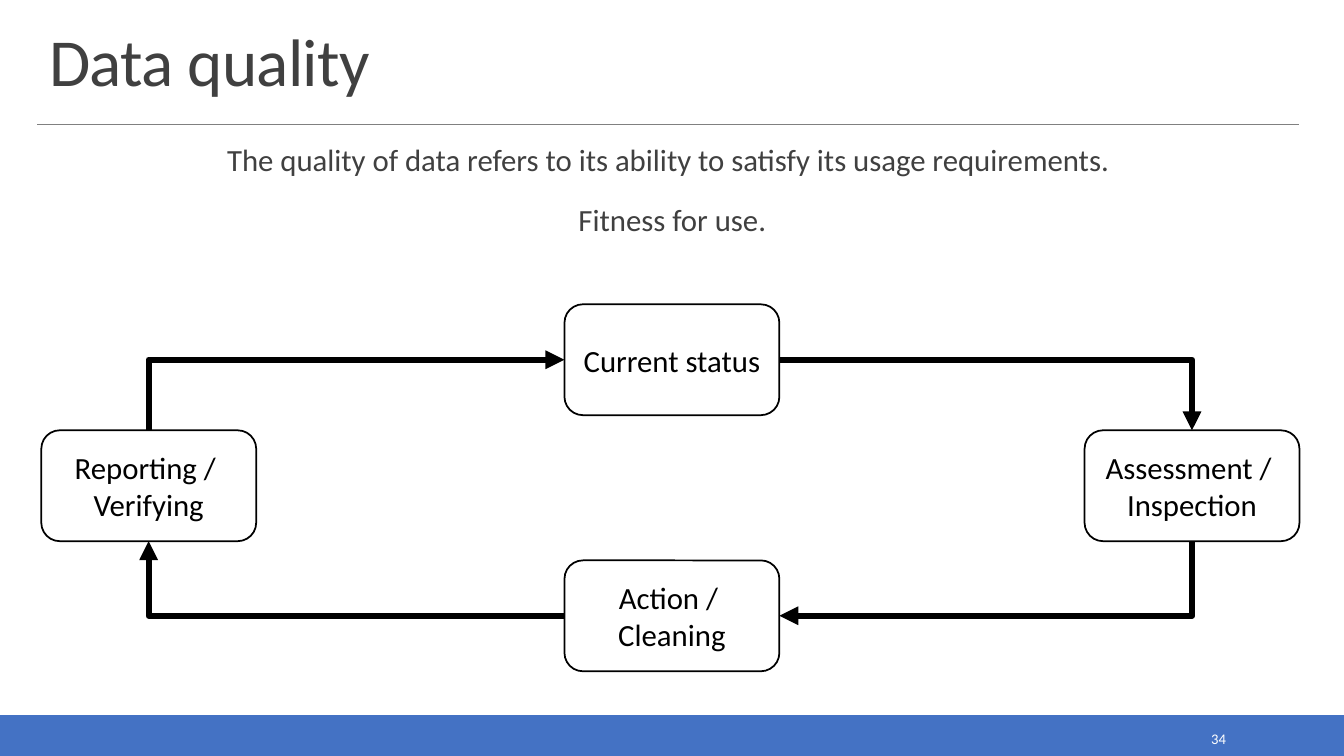
import dataclasses

import pptx
import pptx.dml.color
import pptx.enum.shapes
import pptx.enum.text
import pptx.oxml
import pptx.oxml.ns
import pptx.util

Pt = pptx.util.Pt
Align = pptx.enum.text.PP_ALIGN
Anchor = pptx.enum.text.MSO_ANCHOR
Preset = pptx.enum.shapes.MSO_SHAPE
TOP, LEFT, BOTTOM, RIGHT = range(4)


@dataclasses.dataclass(frozen=True)
class Theme:
    font: str = "Calibri"
    ink: str = "000000"
    grey: str = "404040"
    rule: str = "808080"
    bar: str = "4472C4"
    light: str = "FFFFFF"
    title_size: float = 48
    body_size: float = 22
    number_size: float = 10.5


THEME = Theme()
STEP_WIDTH, STEP_HEIGHT = 153.5, 79.2


def rgb(value):
    return pptx.dml.color.RGBColor.from_string(value)


def write(box, text, *, size=THEME.body_size, color=THEME.ink, align=Align.CENTER,
          anchor=Anchor.MIDDLE, line_spacing=None, before=None, after=None,
          tracking=None, side_inset=7.2):
    frame = box.text_frame
    frame.word_wrap = True
    frame.vertical_anchor = anchor
    frame.margin_left = frame.margin_right = Pt(side_inset)
    frame.text = text
    for para in frame.paragraphs:
        para.alignment = align
        if line_spacing is not None:
            para.line_spacing = line_spacing
        if before is not None:
            para.space_before = Pt(before)
        if after is not None:
            para.space_after = Pt(after)
        for span in para.runs:
            span.font.name = THEME.font
            span.font.size = Pt(size)
            span.font.color.rgb = rgb(color)
            if tracking is not None:
                span.font._element.set("spc", str(int(tracking * 100)))


def add_text(page, left, top, width, height, text, **text_format):
    box = page.shapes.add_textbox(Pt(left), Pt(top), Pt(width), Pt(height))
    write(box, text, **text_format)


def add_statement(page, left, top, text):
    add_text(page, left, top, 901.5, 33.8, text, color=THEME.grey, anchor=Anchor.TOP,
             line_spacing=0.9, before=12, after=2, side_inset=0)


def add_shape(page, preset, left, top, width, height, line, fill=None):
    shape = page.shapes.add_shape(preset, Pt(left), Pt(top), Pt(width), Pt(height))
    shape.shadow.inherit = False
    shape.line.color.rgb = rgb(line)
    shape.line.width = Pt(1.25)
    if fill:
        shape.fill.solid()
        shape.fill.fore_color.rgb = rgb(fill)
    else:
        shape.fill.background()
    return shape


def add_step(page, left, top, text):
    step = add_shape(page, Preset.ROUNDED_RECTANGLE, left, top,
                     STEP_WIDTH, STEP_HEIGHT, THEME.ink)
    write(step, text)
    return step


def add_line(page, kind, start, end, color, width):
    line = page.shapes.add_connector(kind, *map(Pt, start + end))
    line.line.color.rgb = rgb(color)
    line.line.width = Pt(width)
    line._element.spPr.append(pptx.oxml.parse_xml(
        f"<a:effectLst {pptx.oxml.ns.nsdecls('a')}/>"))
    return line


def add_corner_arrow(page, middle_step, middle_side, outer_step, outer_side, arrow_end):
    arrow = add_line(page, pptx.enum.shapes.MSO_CONNECTOR.ELBOW, (0, 0), (0, 0),
                     THEME.ink, 4.5)
    arrow.begin_connect(middle_step, middle_side)
    arrow.end_connect(outer_step, outer_side)
    properties = arrow._element.spPr
    properties.find(pptx.oxml.ns.qn("a:prstGeom")).set("prst", "bentConnector2")
    properties.find(pptx.oxml.ns.qn("a:ln")).append(pptx.oxml.parse_xml(
        f"<a:{arrow_end} {pptx.oxml.ns.nsdecls('a')} type='triangle'/>"))


def add_cycle(page):
    left, center, right = 29.5, 403.2, 774.7
    upper, middle, lower = 217.4, 307.4, 400.3
    reporting = add_step(page, left, middle, "Reporting / \vVerifying")
    status = add_step(page, center, upper, "Current status")
    assessment = add_step(page, right, middle, "Assessment / \vInspection")
    action = add_step(page, center, lower, "Action / \nCleaning")
    add_corner_arrow(page, status, LEFT, reporting, TOP, "headEnd")
    add_corner_arrow(page, status, RIGHT, assessment, TOP, "tailEnd")
    add_corner_arrow(page, action, LEFT, reporting, BOTTOM, "tailEnd")
    add_corner_arrow(page, action, RIGHT, assessment, BOTTOM, "headEnd")


def main():
    deck = pptx.Presentation()
    deck.slide_width, deck.slide_height = Pt(960), Pt(540)
    page = deck.slides.add_slide(deck.slide_layouts[6])
    add_shape(page, Preset.RECTANGLE, 0, 511.2, 960, 28.8, THEME.bar, THEME.bar)
    add_line(page, pptx.enum.shapes.MSO_CONNECTOR.STRAIGHT, (26.6, 88.6), (928, 88.6),
             THEME.rule, 0.5)
    add_text(page, 28.1, 14.4, 901.5, 60.5, "Data quality", size=THEME.title_size,
             color=THEME.grey, align=Align.LEFT, anchor=Anchor.BOTTOM,
             line_spacing=0.85, tracking=-0.5)
    add_statement(page, 26.6, 100.1, "The quality of data refers to its ability "
                  "to satisfy its usage requirements.")
    add_text(page, 779.8, 517.7, 103, 20.2, "34", size=THEME.number_size,
             color=THEME.light, align=Align.RIGHT)
    add_statement(page, 29.5, 142.6, "Fitness for use.")
    add_cycle(page)
    deck.save("out.pptx")


if __name__ == "__main__":
    main()
